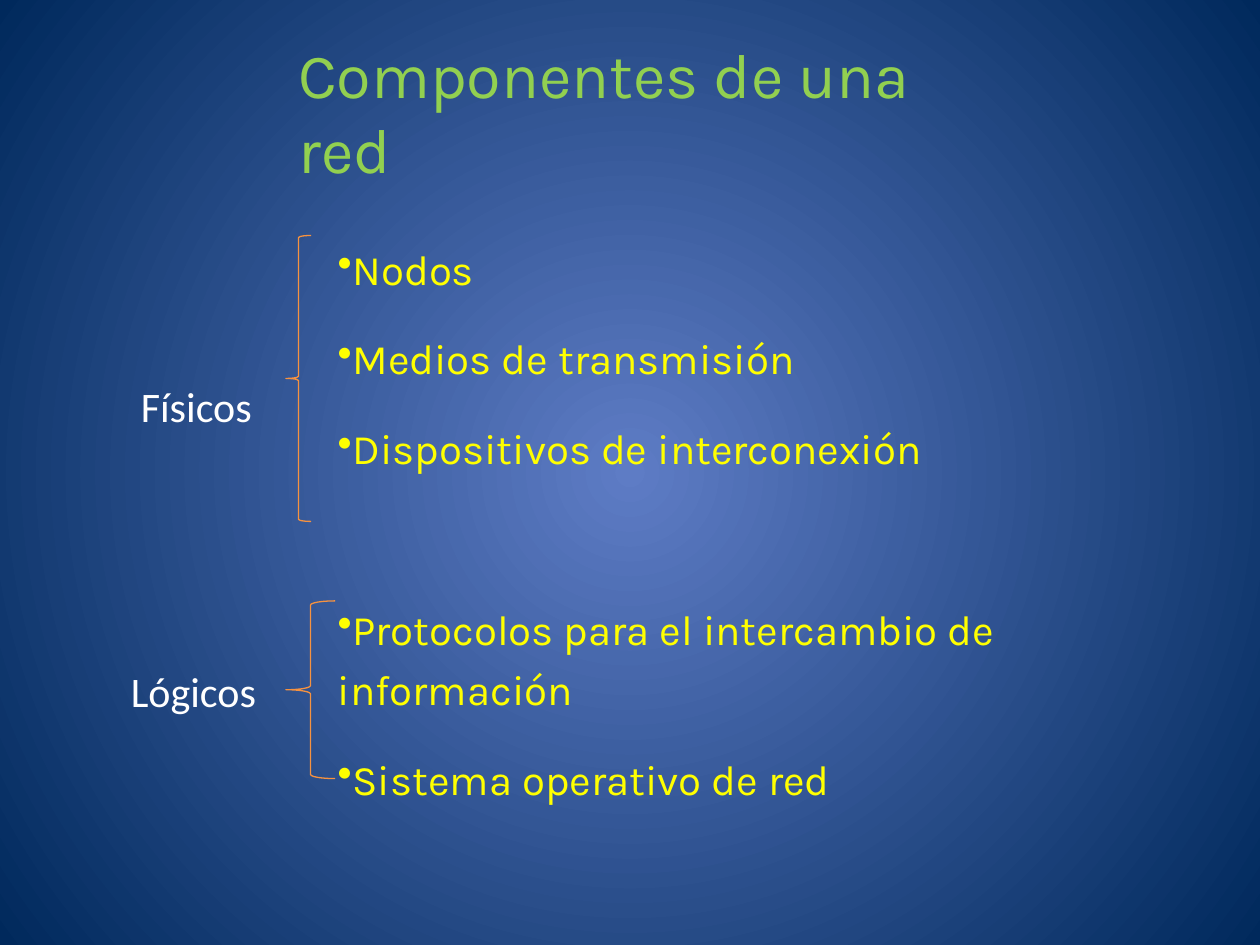
from lxml import etree
from pptx import Presentation
from pptx.dml.color import RGBColor
from pptx.enum.shapes import MSO_SHAPE
from pptx.oxml.ns import qn
from pptx.util import Pt

LEFT_BRACE = MSO_SHAPE.LEFT_BRACE
GREEN = RGBColor(0x92, 0xD0, 0x50)
YELLOW = RGBColor(0xFF, 0xFF, 0x00)
WHITE = RGBColor(0xFF, 0xFF, 0xFF)
ORANGE = RGBColor(0xF6, 0x92, 0x40)
GLOW_BLUE = RGBColor(0x5E, 0x7C, 0xC5)
DEEP_BLUE = RGBColor(0x00, 0x29, 0x5C)

ITEM_GAP = 16.8
GROUP_GAP = 68.4
GROUPS = [
    ["Nodos", "Medios de transmisión", "Dispositivos de interconexión"],
    ["Protocolos para el intercambio de información", "Sistema operativo de red"],
]


def paint_background(slide):
    fill = slide.background.fill
    fill.gradient()
    for stop, color in zip(fill.gradient_stops, (GLOW_BLUE, DEEP_BLUE)):
        stop.color.rgb = color
    gradient = slide.element.find(".//" + qn("a:gradFill"))
    gradient.remove(gradient.find(qn("a:lin")))
    radial = etree.SubElement(gradient, qn("a:path"))
    radial.set("path", "circle")
    center = etree.SubElement(radial, qn("a:fillToRect"))
    for side in "ltrb":
        center.set(side, "50000")


def add_text_frame(slide, box, wrap=True):
    frame = slide.shapes.add_textbox(*map(Pt, box)).text_frame
    frame.word_wrap = wrap
    return frame


def write(paragraph, wording, font_name, size, color):
    paragraph.text = wording
    font = paragraph.font
    font.name, font.size = font_name, Pt(size)
    font.color.rgb = color


def add_title(slide, box):
    frame = add_text_frame(slide, box)
    write(frame.paragraphs[0], "Componentes de una red", "Karla", 36, GREEN)


def add_components(slide, box):
    frame = add_text_frame(slide, box)
    paragraph = frame.paragraphs[0]
    for group_index, group in enumerate(GROUPS):
        for item_index, item in enumerate(group):
            if group_index or item_index:
                paragraph = frame.add_paragraph()
            write(paragraph, item, "Karla", 24, YELLOW)
            paragraph.line_spacing = 1.2
            starts_group = group_index and not item_index
            paragraph.space_before = Pt(GROUP_GAP if starts_group else ITEM_GAP)
            properties = paragraph._p.get_or_add_pPr()
            properties.set("marL", "0")
            properties.set("indent", "0")
            bullet = etree.Element(qn("a:buChar"), char="•")
            properties.find(qn("a:spcBef")).addnext(bullet)


def add_category(slide, box, name, label_width, label_offset, label_gap):
    left, top, width, height = box
    brace = slide.shapes.add_shape(LEFT_BRACE, *map(Pt, box))
    brace.shadow.inherit = False
    brace.fill.background()
    brace.line.color.rgb = ORANGE
    brace.line.width = Pt(0.75)
    label_box = (left - label_gap - label_width, top + label_offset, label_width, 36)
    frame = add_text_frame(slide, label_box, wrap=False)
    write(frame.paragraphs[0], name, "Calibri", 24, WHITE)


def main():
    presentation = Presentation()
    presentation.slide_width, presentation.slide_height = Pt(720), Pt(540)
    slide = presentation.slides.add_slide(presentation.slide_layouts[6])
    paint_background(slide)
    add_title(slide, (163.4, 16.6, 415.4, 50.4))
    add_components(slide, (185.8, 129.6, 512.6, 318.2))
    add_category(slide, (163.4, 134.6, 14.4, 163.4), "Físicos", 78.5, 79.2, 11.5)
    add_category(slide, (163.4, 343.4, 28.1, 101.5), "Lógicos", 86.4, 33.2, 9.3)
    presentation.save("out.pptx")


if __name__ == "__main__":
    main()
